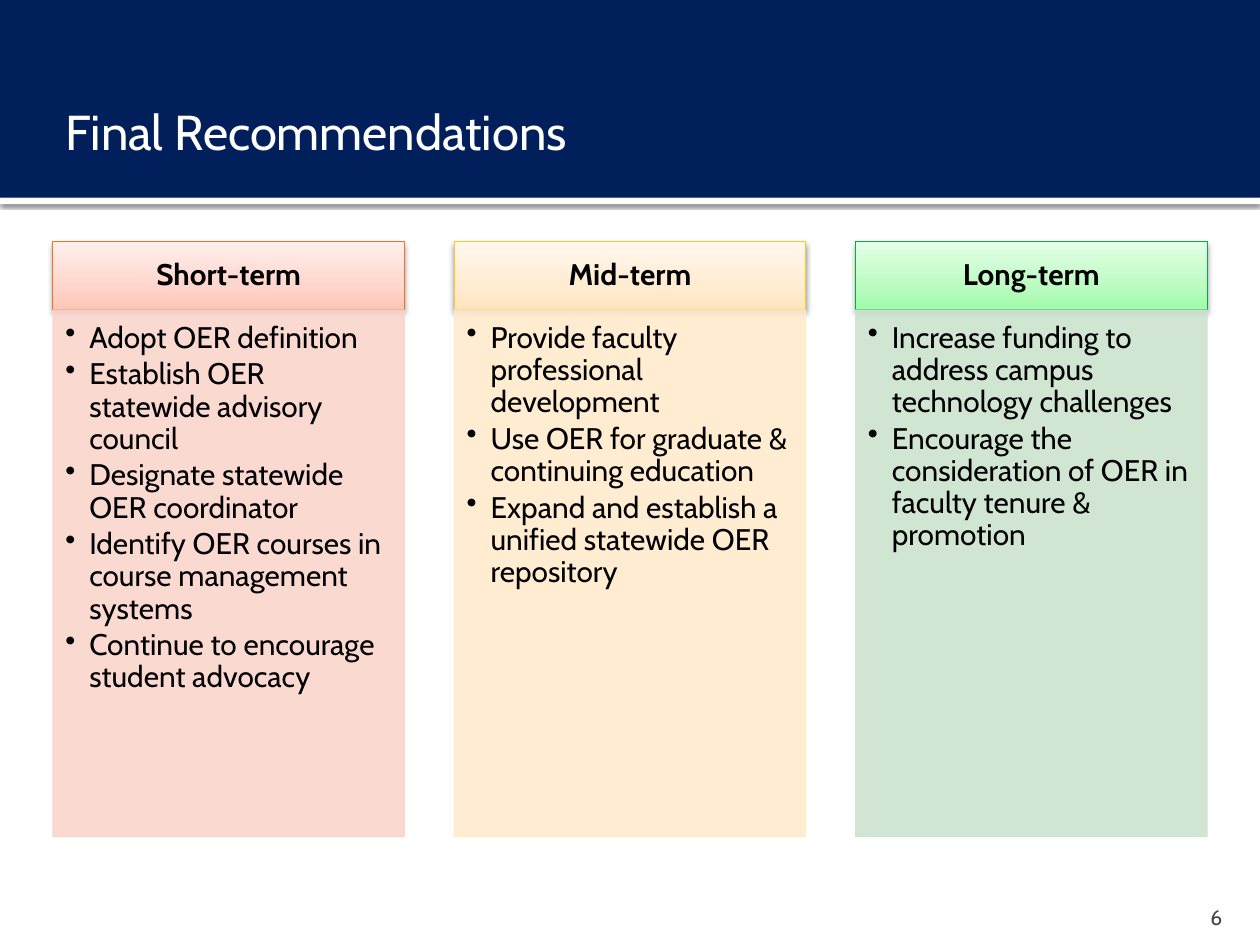
from dataclasses import dataclass

from lxml import etree
from pptx import Presentation
from pptx import util as u
from pptx.dml.color import RGBColor
from pptx.enum import shapes, text
from pptx.oxml.ns import qn

WIDTH, HEIGHT = 10, 7.5
FONT = "Cabin"
MARGIN, COLUMN_WIDTH = 0.42, 2.79
HEADER_TOP, HEADER_HEIGHT, LIST_HEIGHT = 1.92, 0.54, 4.18
BAND_HEIGHT = 1.57
INDENT = 0.19

COLORS = {
    "navy": "001F5B",
    "white": "FFFFFF",
    "black": "000000",
    "gray": "454545",
}


@dataclass
class Term:
    name: str
    gradient: tuple[str, str, str]
    line: str
    tint: str
    items: tuple[str, ...]


@dataclass
class Shadow:
    opacity: int
    blur: float
    distance: float


TERMS = [
    Term("Short-term", ("FFC5B7", "FFD6CD", "FFEFEC"), "F37121", "FAD5CD", (
        "Adopt OER definition",
        "Establish OER statewide advisory council",
        "Designate statewide OER coordinator",
        "Identify OER courses in course management systems",
        "Continue to encourage student advocacy",
    )),
    Term("Mid-term", ("FFE5BE", "FFECD1", "FFF8EE"), "FFC627", "FFEACD", (
        "Provide faculty professional development",
        "Use OER for graduate & continuing education",
        "Expand and establish a unified statewide OER repository",
    )),
    Term("Long-term", ("9EFBA8", "BCFBC2", "E4FFE7"), "00AF41", "CCE3CF", (
        "Increase funding to address campus technology challenges",
        "Encourage the consideration of OER in faculty tenure & promotion",
    )),
]


def add_node(parent, tag: str, **attributes):
    values = {name: str(value) for name, value in attributes.items()}
    return etree.SubElement(parent, qn(tag), values)


def add_color(parent, color: str, opacity: int = 100) -> None:
    node = add_node(parent, "a:srgbClr", val=color)
    if opacity < 100:
        add_node(node, "a:alpha", val=opacity * 1000)


def add_box(page, left: float, top: float, width: float, height: float,
            fill: str, line: str | None = None):
    box = page.shapes.add_shape(shapes.MSO_SHAPE.RECTANGLE, u.Inches(left),
                                u.Inches(top), u.Inches(width), u.Inches(height))
    box.shadow.inherit = False
    box.fill.solid()
    box.fill.fore_color.rgb = RGBColor.from_string(fill)
    if line:
        box.line.color.rgb = RGBColor.from_string(line)
        box.line.width = u.Pt(0.5)
    else:
        box.line.fill.background()
    return box


def cast_shadow(box, shadow: Shadow) -> None:
    effects = box.element.spPr.find(qn("a:effectLst"))
    node = add_node(effects, "a:outerShdw", blurRad=u.Pt(shadow.blur),
                    dist=u.Pt(shadow.distance), dir=5400000, rotWithShape=0)
    add_color(node, COLORS["black"], shadow.opacity)


def fill_gradient(box, colors: tuple[str, str, str]) -> None:
    """Blend three colours from the bottom edge to the top edge."""
    box.fill.gradient()
    box.fill.gradient_angle = 90
    stops = next(box.element.spPr.iter(qn("a:gsLst")))
    for stop in list(stops):
        stops.remove(stop)
    for position, color in zip((0, 35, 100), colors):
        add_color(add_node(stops, "a:gs", pos=position * 1000), color)


def set_opacity(box, opacity: int) -> None:
    for color in box.element.spPr.iter(qn("a:srgbClr")):
        add_node(color, "a:alpha", val=opacity * 1000)


def set_frame(box, insets: tuple[float, float, float, float], anchor):
    frame = box.text_frame
    frame.word_wrap = True
    frame.auto_size = text.MSO_AUTO_SIZE.NONE
    frame.vertical_anchor = anchor
    (frame.margin_left, frame.margin_top,
     frame.margin_right, frame.margin_bottom) = map(u.Inches, insets)
    return frame


def add_span(para, words: str, size: float, color: str, align, bold: bool = False) -> None:
    para.alignment = align
    span = para.add_run()
    span.text = words
    span.font.name = FONT
    span.font.size = u.Pt(size)
    span.font.bold = bold
    span.font.color.rgb = RGBColor.from_string(COLORS[color])


def add_bullet(para) -> None:
    properties = para._p.get_or_add_pPr()
    properties.set("marL", str(u.Inches(INDENT)))
    properties.set("indent", str(-u.Inches(INDENT)))
    add_node(properties, "a:buChar", char="•")


def add_term(page, term: Term, left: float) -> None:
    header = add_box(page, left, HEADER_TOP, COLUMN_WIDTH, HEADER_HEIGHT,
                     term.tint, term.line)
    fill_gradient(header, term.gradient)
    cast_shadow(header, Shadow(38, 3.5, 2))
    frame = set_frame(header, (0.13, 0.08, 0.13, 0.08), text.MSO_ANCHOR.MIDDLE)
    frame.paragraphs[0].line_spacing = 0.9
    add_span(frame.paragraphs[0], term.name, 17, "black", text.PP_ALIGN.CENTER, True)

    panel = add_box(page, left, HEADER_TOP + HEADER_HEIGHT, COLUMN_WIDTH,
                    LIST_HEIGHT, term.tint, term.tint)
    set_opacity(panel, 90)
    frame = set_frame(panel, (0.1, 0.1, 0.13, 0.15), text.MSO_ANCHOR.TOP)
    for index, item in enumerate(term.items):
        para = frame.add_paragraph() if index else frame.paragraphs[0]
        para.line_spacing = 0.9
        para.space_after = u.Pt(2.6)
        add_bullet(para)
        add_span(para, item, 17, "black", text.PP_ALIGN.LEFT)


def add_title(page, words: str) -> None:
    title = page.shapes.title
    title.left, title.top = u.Inches(MARGIN), u.Inches(0.58)
    title.width, title.height = u.Inches(WIDTH - 2 * MARGIN), u.Inches(0.92)
    title.element.getparent().append(title.element)  # in front of the band
    frame = set_frame(title, (0.1, 0.05, 0.05, 0.05), text.MSO_ANCHOR.MIDDLE)
    add_span(frame.paragraphs[0], words, 28, "white", text.PP_ALIGN.LEFT)


def add_page_number(page, number: str) -> None:
    box = page.shapes.add_textbox(u.Inches(9), u.Inches(7.08), u.Inches(0.8), u.Inches(0.3))
    frame = set_frame(box, (0.1, 0.05, 0.1, 0), text.MSO_ANCHOR.BOTTOM)
    add_span(frame.paragraphs[0], number, 12, "gray", text.PP_ALIGN.RIGHT)


def main() -> None:
    deck = Presentation()
    deck.slide_width, deck.slide_height = u.Inches(WIDTH), u.Inches(HEIGHT)
    page = deck.slides.add_slide(deck.slide_layouts.get_by_name("Title Only"))

    rule = add_box(page, 0, BAND_HEIGHT, WIDTH, 0.05, COLORS["white"])
    cast_shadow(rule, Shadow(60, 2.5, 0.8))
    add_box(page, 0, 0, WIDTH, BAND_HEIGHT, COLORS["navy"])
    add_page_number(page, "6")
    add_title(page, "Final Recommendations")

    pitch = (WIDTH - 2 * MARGIN - COLUMN_WIDTH) / (len(TERMS) - 1)
    for column, term in enumerate(TERMS):
        add_term(page, term, MARGIN + column * pitch)
    deck.save("out.pptx")


if __name__ == "__main__":
    main()
